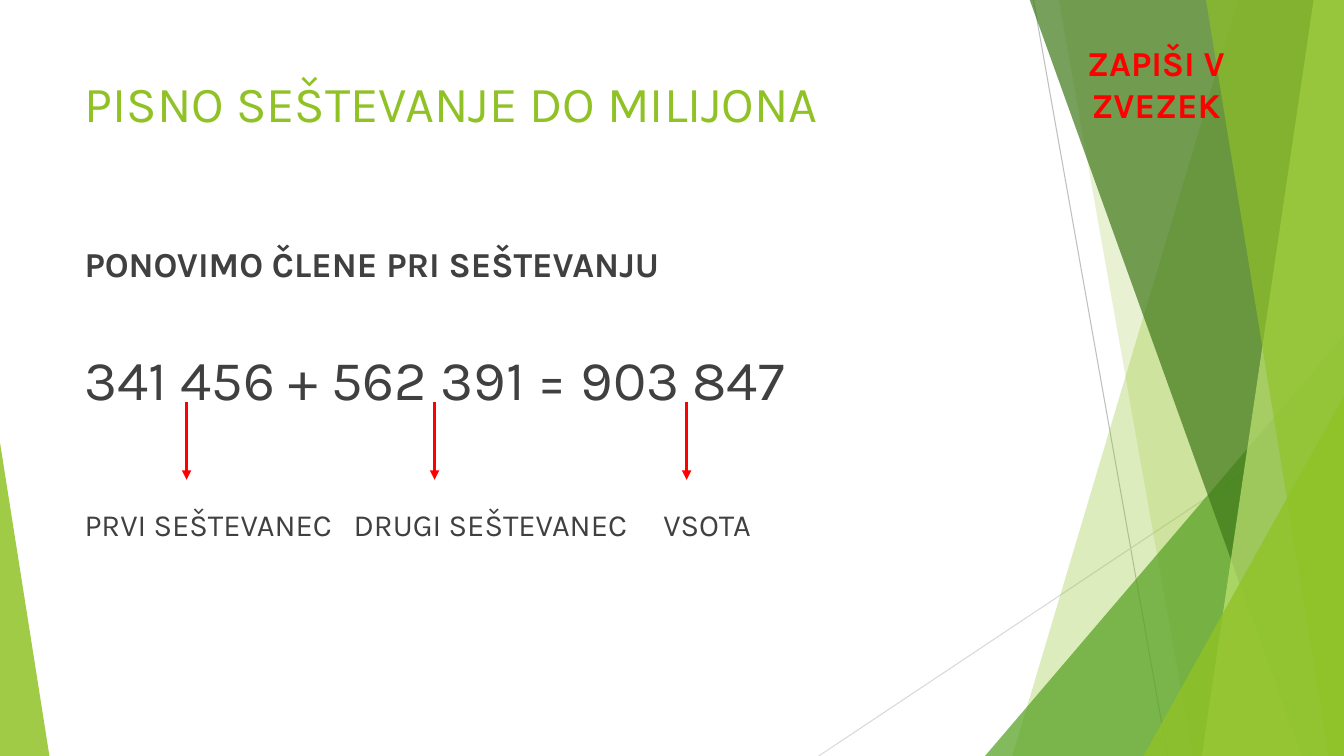
import pptx
import pptx.dml.color
import pptx.enum.shapes
import pptx.enum.text
import pptx.oxml
import pptx.oxml.ns
import pptx.util
from pptx.util import Inches

FONT = "Karla"
COLORS = {
    "lime": "90C226",
    "pale_lime": "C0E474",
    "green": "54A021",
    "dark_green": "3F7819",
    "text": "404040",
    "red": "FF0000",
    "gray": "BFBFBF",
    "light_gray": "D9D9D9",
}
WIDTH, HEIGHT = 13.33, 7.5
BAND_TOP = -0.01


def rgb(name):
    return pptx.dml.color.RGBColor.from_string(COLORS[name])


def add_xml(parent, tag, **attributes):
    child = pptx.oxml.parse_xml(f"<a:{tag} {pptx.oxml.ns.nsdecls('a')}/>")
    for key, value in attributes.items():
        child.set(key, str(value))
    parent.append(child)
    return child


def paint(shape, color, opacity):
    """Fill a shape with a translucent colour, without line or shadow."""
    shape.shadow.inherit = False
    shape.line.fill.background()
    shape.fill.solid()
    shape.fill.fore_color.rgb = rgb(color)
    color_element = shape.fill._xPr.find(".//" + pptx.oxml.ns.qn("a:srgbClr"))
    add_xml(color_element, "alpha", val=opacity * 1000)


def add_band(page, top_x, bottom_x, color, opacity, top_right=WIDTH):
    """Draw a slanted band that reaches the right edge of the slide."""
    corners = [(top_x, BAND_TOP), (top_right, BAND_TOP),
               (WIDTH, HEIGHT), (bottom_x, HEIGHT)]
    points = [(Inches(x), Inches(y)) for x, y in corners]
    builder = page.shapes.build_freeform(*points[0])
    builder.add_line_segments(points[1:], close=True)
    paint(builder.convert_to_shape(), color, opacity)


def add_corner(page, left, top, width, apex, color, opacity):
    """Draw a triangle standing on the bottom edge of the slide."""
    triangle = page.shapes.add_shape(
        pptx.enum.shapes.MSO_SHAPE.ISOSCELES_TRIANGLE,
        Inches(left), Inches(top), Inches(width), Inches(HEIGHT - top))
    triangle.adjustments[0] = apex
    paint(triangle, color, opacity)


def add_line(page, start, end, color, weight, arrow=False):
    line = page.shapes.add_connector(
        pptx.enum.shapes.MSO_CONNECTOR.STRAIGHT,
        *(Inches(value) for value in start + end))
    line.line.color.rgb = rgb(color)
    line.line.width = pptx.util.Pt(weight)
    if arrow:
        add_xml(line.line._get_or_add_ln(), "tailEnd", type="triangle")
    add_xml(line._element.spPr, "effectLst")


def write(para, text, size, color="text", bold=False, before=0, align="LEFT"):
    para.alignment = getattr(pptx.enum.text.PP_ALIGN, align)
    para.space_before = pptx.util.Pt(before)
    span = para.add_run()
    span.text = text
    span.font.name = FONT
    span.font.size = pptx.util.Pt(size)
    span.font.bold = bold
    span.font.color.rgb = rgb(color)


def prepare_frame(box, anchor="TOP"):
    frame = box.text_frame
    frame.word_wrap = True
    frame.auto_size = pptx.enum.text.MSO_AUTO_SIZE.NONE
    frame.vertical_anchor = getattr(pptx.enum.text.MSO_ANCHOR, anchor)
    return frame


def add_tabs(para, stops):
    tab_list = add_xml(para._p.get_or_add_pPr(), "tabLst")
    for stop in stops:
        add_xml(tab_list, "tab", pos=Inches(stop), algn="l")


def add_background(page):
    add_line(page, (10.25, 0), (11.58, HEIGHT), "gray", 0.75)
    add_line(page, (WIDTH, 4.03), (8.12, HEIGHT), "light_gray", 0.75)
    add_band(page, 12.28, 10.04, "lime", 30)
    add_band(page, 10.5, 11.83, "lime", 20)
    add_corner(page, 9.77, 3.33, 3.56, 1, "green", 72)
    add_band(page, 10.21, 12.91, "dark_green", 70)
    add_band(page, 13.03, 11.92, "pale_lime", 70)
    add_band(page, 11.96, 13.18, "lime", 65)
    add_corner(page, 11.34, 3.93, 1.99, 1, "lime", 80)
    add_corner(page, 0, 4.39, 0.49, 0, "lime", 85)


def add_title(page, text):
    title = page.shapes.title
    title.left, title.top = Inches(0.74), Inches(0.67)
    title.width, title.height = Inches(9.4), Inches(1.44)
    write(prepare_frame(title).paragraphs[0], text, 36, color="lime")


def add_sum(page):
    box = page.shapes.add_textbox(
        Inches(0.74), Inches(2.36), Inches(9.4), Inches(4.24))
    frame = prepare_frame(box)
    write(frame.paragraphs[0], "PONOVIMO ČLENE PRI SEŠTEVANJU", 25,
          bold=True, before=10)
    write(frame.add_paragraph(), "341 456 + 562 391 = 903 847", 40, before=43)
    labels = frame.add_paragraph()
    write(labels, "PRVI SEŠTEVANEC\tDRUGI SEŠTEVANEC\tVSOTA", 22, before=67)
    add_tabs(labels, (2.67, 5.74))
    for x in (1.85, 4.31, 6.81):
        add_line(page, (x, 3.99), (x, 4.76), "red", 2.25, arrow=True)


def add_reminder(page, text):
    box = page.shapes.add_shape(
        pptx.enum.shapes.MSO_SHAPE.ROUNDED_RECTANGLE,
        Inches(10.39), Inches(0.44), Inches(2.15), Inches(0.77))
    box.shadow.inherit = False
    box.fill.background()
    box.line.fill.background()
    write(prepare_frame(box, "MIDDLE").paragraphs[0], text, 25,
          color="red", bold=True, align="CENTER")


def main():
    deck = pptx.Presentation()
    deck.slide_width, deck.slide_height = Inches(WIDTH), Inches(HEIGHT)
    page = deck.slides.add_slide(deck.slide_layouts.get_by_name("Title Only"))
    add_background(page)
    add_title(page, "PISNO SEŠTEVANJE DO MILIJONA")
    add_sum(page)
    add_reminder(page, "ZAPIŠI V ZVEZEK")
    deck.save("out.pptx")


if __name__ == "__main__":
    main()
